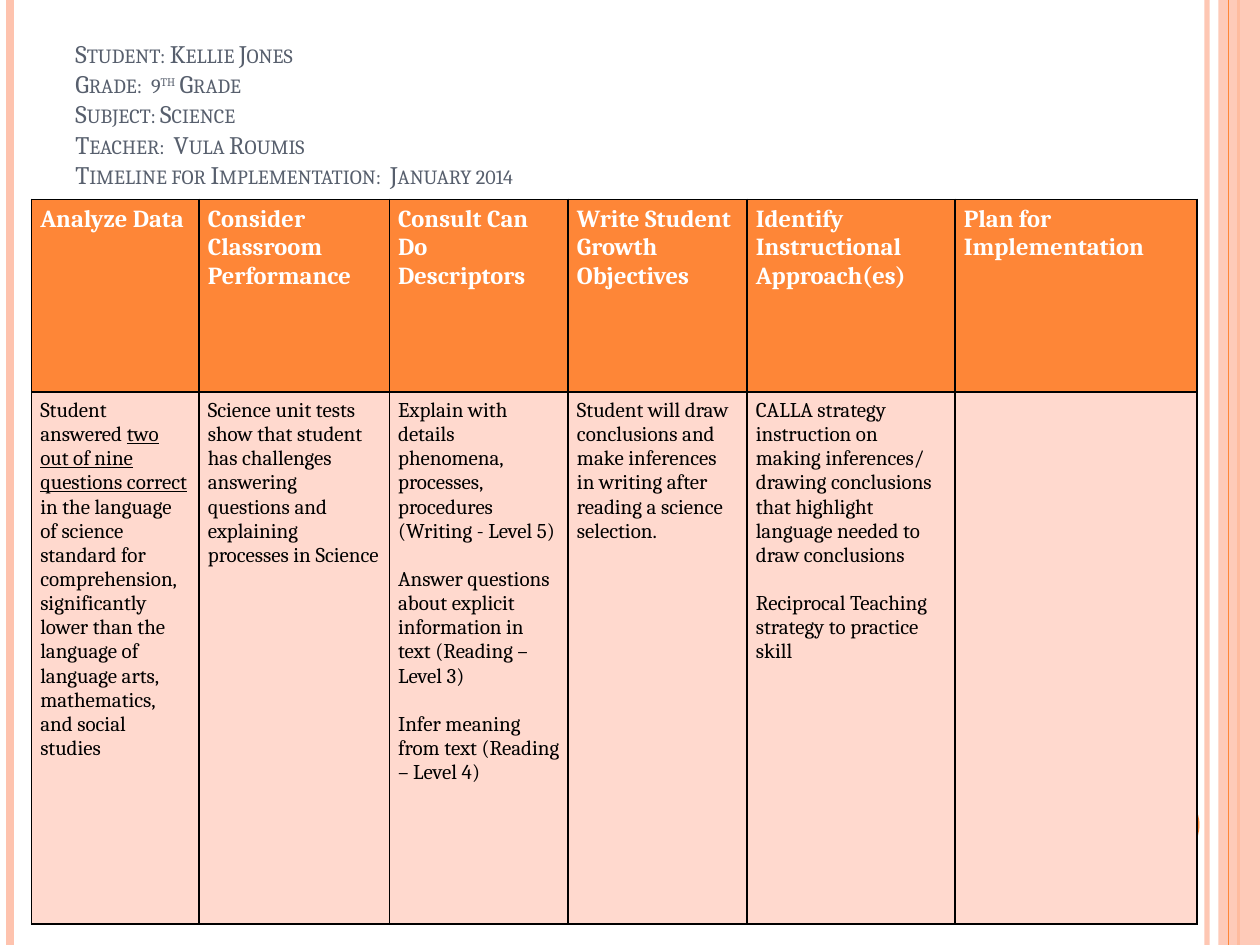
"""Build a one-slide student growth plan with a striped frame and a planning table."""
import pptx
import pptx.dml.color
import pptx.enum.shapes
import pptx.enum.text
import pptx.oxml
import pptx.oxml.ns
import pptx.util
import lxml.etree

COLORS = {"orange": "FE8637", "peach": "FEC3AE", "pale": "FFD9CE",
          "slate": "575F6D", "black": "000000", "white": "FFFFFF"}
FONT = "Cambria"
NAMESPACE = pptx.oxml.ns.nsdecls("a")


def rgb(name):
    return pptx.dml.color.RGBColor.from_string(COLORS[name])


def set_alpha(shape_properties, percent):
    color = next(shape_properties.iter(pptx.oxml.ns.qn("a:srgbClr")))
    lxml.etree.SubElement(color, pptx.oxml.ns.qn("a:alpha")).set("val", str(percent * 1000))


deck = pptx.Presentation()
deck.slide_width = pptx.util.Inches(10)
deck.slide_height = pptx.util.Inches(7.5)
width, height = deck.slide_width, deck.slide_height
page = deck.slides.add_slide(deck.slide_layouts[6])
shapes = page.shapes

stripes = [(0.958, "peach", 3, 93), (0.008, "peach", 4.5, 100),
           (0.983, "orange", 1.5, 100), (0.975, "orange", 0.75, 100)]
for share, color, weight, opacity in stripes:
    x = int(width * share)
    stripe = shapes.add_connector(pptx.enum.shapes.MSO_CONNECTOR.STRAIGHT, x, 0, x, height)
    stripe.line.color.rgb = rgb(color)
    stripe.line.width = pptx.util.Pt(weight)
    properties = stripe._element.spPr
    lxml.etree.SubElement(properties, pptx.oxml.ns.qn("a:effectLst"))
    if opacity < 100:
        set_alpha(properties, opacity)
    if share == 0.983:
        band_left = int(width * 0.967)
        band = shapes.add_shape(pptx.enum.shapes.MSO_SHAPE.RECTANGLE,
                                band_left, 0, width - band_left, height)
        band.fill.solid()
        band.fill.fore_color.rgb = rgb("peach")
        band.line.fill.background()
        band.shadow.inherit = False
        set_alpha(band._element.spPr, 87)

diameter = int(width * 0.06)
badge = shapes.add_shape(pptx.enum.shapes.MSO_SHAPE.OVAL,
                         int(width * 0.892), int(height * 0.833), diameter, diameter)
badge.fill.solid()
badge.fill.fore_color.rgb = rgb("orange")
badge.line.fill.background()
badge.shadow.inherit = False

title_lines = [["Student: Kellie Jones"], ["Grade:  9", "th", " Grade"],
               ["Subject: Science"], ["Teacher:  Vula Roumis"],
               ["Timeline for Implementation:  January 2014"]]
title = shapes.add_textbox(int(width * 0.05), int(height * 0.04),
                           int(width * 0.817), int(height * 0.167))
frame = title.text_frame
frame.word_wrap = True
frame.vertical_anchor = pptx.enum.text.MSO_ANCHOR.BOTTOM
para = frame.paragraphs[0]
para.font.name = FONT
para.font.size = pptx.util.Pt(14.4)
para.font.color.rgb = rgb("slate")
for number, line in enumerate(title_lines):
    if number:
        para.add_line_break()
    for text in line:
        span = para.add_run()
        span.text = text
        span_properties = span.font._element
        span_properties.set("cap", "small")
        if text == "th":
            span_properties.set("baseline", "30000")

headings = ["Analyze Data", "Consider Classroom Performance", "Consult Can Do Descriptors",
            "Write Student Growth Objectives", "Identify Instructional Approach(es)",
            "Plan for Implementation"]
details = [
    [("Student answered _two out of nine questions correct _in the language of science "
      "standard for comprehension, significantly lower than the language of language arts, "
      "mathematics, and social studies", 0)],
    [("Science unit tests show that student has challenges answering questions and "
      "explaining processes in Science", 0)],
    [("Explain with details phenomena, processes, procedures (Writing - Level 5)", 0),
     ("Answer questions about explicit information in text (Reading – Level 3)", 1),
     ("Infer meaning from text (Reading – Level 4)", 1)],
    [("Student will draw conclusions and make inferences in writing after reading a "
      "science selection.", 0)],
    [("CALLA strategy instruction on making inferences/", 0),
     ("drawing conclusions that highlight language needed to draw conclusions", 0),
     ("Reciprocal Teaching strategy to practice skill", 1)],
    [("", 0)],
]
rows = [([[(heading, 0)] for heading in headings], 1.53, 14, "white", "orange", True),
        (details, 4.22, 12, "black", "pale", False)]
column_widths = [1.33, 1.51, 1.42, 1.42, 1.65, 1.92]
blank_line = pptx.util.Pt(13.8)

table = shapes.add_table(len(rows), len(column_widths), int(width * 0.025), int(height * 0.211),
                         int(width * 0.925), int(height * 0.767)).table
for column, size in zip(table.columns, column_widths):
    column.width = pptx.util.Inches(size)
for row, (contents, row_height, size, ink, fill, bold) in zip(table.rows, rows):
    row.height = pptx.util.Inches(row_height)
    for cell, paragraphs in zip(row.cells, contents):
        cell.margin_left = cell.margin_right = pptx.util.Inches(0.07)
        cell.margin_top = cell.margin_bottom = pptx.util.Inches(0.05)
        cell_properties = cell._tc.get_or_add_tcPr()
        for side in ("lnL", "lnR", "lnT", "lnB"):
            cell_properties.append(pptx.oxml.parse_xml(
                f'<a:{side} {NAMESPACE} w="12700"><a:solidFill>'
                f'<a:srgbClr val="{COLORS["black"]}"/></a:solidFill></a:{side}>'))
        cell.fill.solid()
        cell.fill.fore_color.rgb = rgb(fill)
        for number, (text, gaps) in enumerate(paragraphs):
            para = cell.text_frame.add_paragraph() if number else cell.text_frame.paragraphs[0]
            para.space_before = blank_line * gaps
            para.font.name = FONT
            para.font.size = pptx.util.Pt(size)
            para.font.bold = bold
            para.font.color.rgb = rgb(ink)
            for position, piece in enumerate(text.split("_")):
                span = para.add_run()
                span.text = piece
                if position % 2:
                    span.font.underline = True

deck.save("out.pptx")
